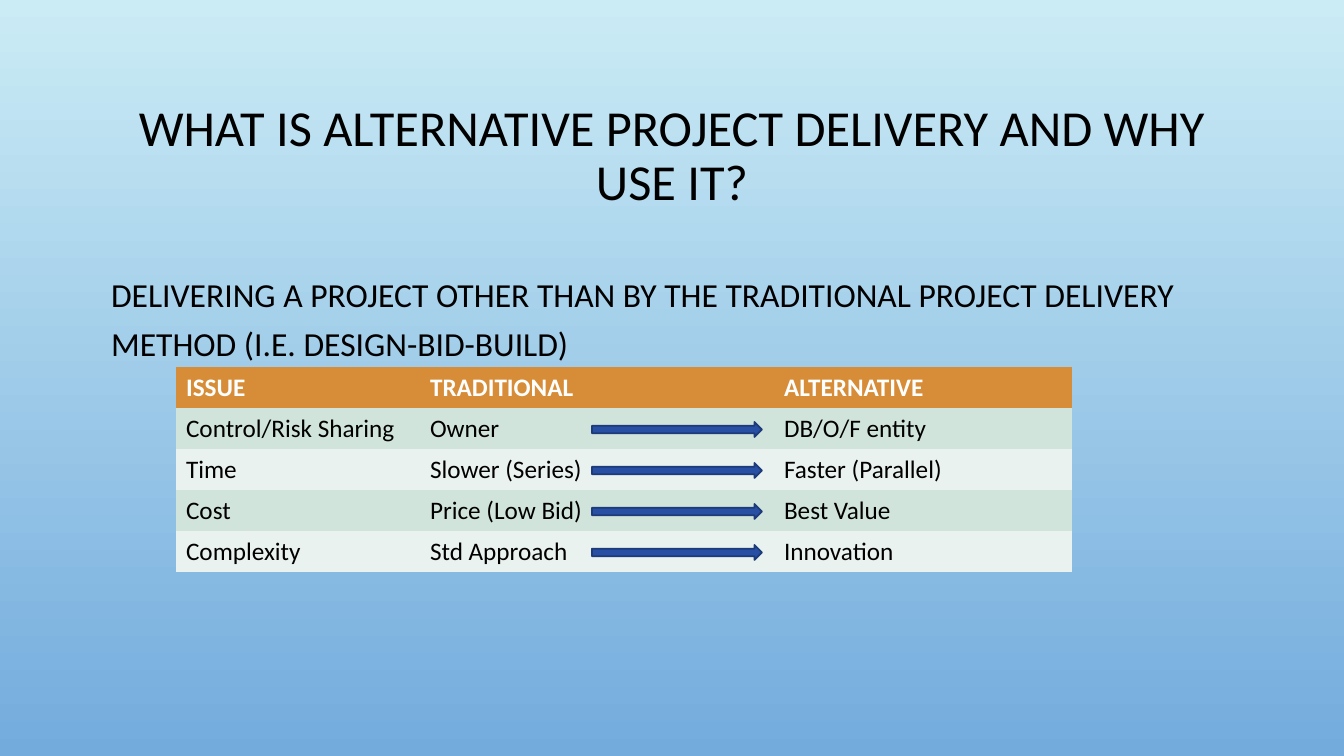
from dataclasses import dataclass

from lxml import etree
from pptx import Presentation
from pptx.dml.color import RGBColor
from pptx.enum.shapes import MSO_SHAPE
from pptx.enum.text import MSO_ANCHOR, MSO_AUTO_SIZE, PP_ALIGN
from pptx.oxml.ns import qn
from pptx.util import Emu, Pt

TITLE = "WHAT IS ALTERNATIVE PROJECT DELIVERY AND WHY USE IT?"
DEFINITION = (
    "DELIVERING A PROJECT OTHER THAN BY THE TRADITIONAL PROJECT DELIVERY "
    "METHOD (I.E. DESIGN-BID-BUILD)"
)
COMPARISON = [
    ("ISSUE", "TRADITIONAL", "ALTERNATIVE"),
    ("Control/Risk Sharing", "Owner", "DB/O/F entity"),
    ("Time", "Slower (Series)", "Faster (Parallel)"),
    ("Cost", "Price (Low Bid)", "Best Value"),
    ("Complexity", "Std Approach", "Innovation"),
]

SLIDE_SIZE = (1344, 756)
TITLE_BOX = (101, 69, 1142, 176)
BODY_BOX = (101, 261, 1142, 377)
TABLE_LEFT, TABLE_TOP = 176, 367
COLUMN_WIDTHS = (244, 354, 298)
ROW_HEIGHT = 41
ARROW_LEFT, ARROW_DROP = 592, 14
ARROW_SIZE = (170, 15)

ARROW = MSO_SHAPE.RIGHT_ARROW
MIDDLE, TOP = MSO_ANCHOR.MIDDLE, MSO_ANCHOR.TOP
CENTER, LEFT = PP_ALIGN.CENTER, PP_ALIGN.LEFT
NO_AUTOFIT = MSO_AUTO_SIZE.NONE
PLAIN_TABLE_STYLE = "{2D5ABB26-0587-4C30-8999-92F81FD0307C}"


@dataclass(frozen=True)
class Theme:
    font: str = "Calibri"
    title_size: int = 36
    body_size: int = 24
    table_size: int = 18
    sky: tuple = ("CBECF5", "73ABDD")
    text: str = "000000"
    header_text: str = "FFFFFF"
    header_fill: str = "D78D38"
    bands: tuple = ("D1E4DB", "E9F2EE")
    arrow_fill: str = "274FA4"
    arrow_line: str = "1D3A79"


THEME = Theme()


def px(length):
    return Emu(round(length * 914400 / 100.8))


def rgb(value):
    return RGBColor.from_string(value)


def style_font(paragraph, size, color, bold=False):
    font = paragraph.font
    font.name, font.size, font.bold = THEME.font, Pt(size), bold
    font.color.rgb = rgb(color)


def fill_placeholder(shape, box, text, size, anchor, alignment, line_spacing):
    shape.left, shape.top, shape.width, shape.height = map(px, box)
    frame = shape.text_frame
    frame.text = text
    frame.word_wrap = True
    frame.auto_size = NO_AUTOFIT
    frame.vertical_anchor = anchor
    paragraph = frame.paragraphs[0]
    paragraph.alignment = alignment
    paragraph.line_spacing = line_spacing
    paragraph.space_before = Pt(0)
    properties = paragraph._p.get_or_add_pPr()
    properties.set("marL", "0")
    properties.set("indent", "0")
    etree.SubElement(properties, qn("a:buNone"))
    style_font(paragraph, size, THEME.text)


def paint_background(slide):
    fill = slide.background.fill
    fill.gradient()
    fill.gradient_angle = 270
    for stop, color in zip(fill.gradient_stops, THEME.sky):
        stop.color.rgb = rgb(color)


def add_comparison(slide):
    table = slide.shapes.add_table(
        len(COMPARISON), len(COLUMN_WIDTHS), px(TABLE_LEFT), px(TABLE_TOP),
        px(sum(COLUMN_WIDTHS)), px(ROW_HEIGHT * len(COMPARISON)),
    ).table
    table._tbl.tblPr.find(qn("a:tableStyleId")).text = PLAIN_TABLE_STYLE
    for column, width in zip(table.columns, COLUMN_WIDTHS):
        column.width = px(width)
    for index, values in enumerate(COMPARISON):
        table.rows[index].height = px(ROW_HEIGHT)
        header = index == 0
        fill = THEME.header_fill if header else THEME.bands[(index - 1) % 2]
        color = THEME.header_text if header else THEME.text
        for cell, value in zip(table.rows[index].cells, values):
            cell.text = value
            cell.fill.solid()
            cell.fill.fore_color.rgb = rgb(fill)
            style_font(cell.text_frame.paragraphs[0], THEME.table_size, color, header)


def add_arrows(slide):
    for row in range(1, len(COMPARISON)):
        top = TABLE_TOP + row * ROW_HEIGHT + ARROW_DROP
        arrow = slide.shapes.add_shape(
            ARROW, px(ARROW_LEFT), px(top), *map(px, ARROW_SIZE)
        )
        arrow.shadow.inherit = False
        arrow.fill.solid()
        arrow.fill.fore_color.rgb = rgb(THEME.arrow_fill)
        arrow.line.color.rgb = rgb(THEME.arrow_line)
        arrow.line.width = Pt(1.25)


def main():
    presentation = Presentation()
    presentation.slide_width, presentation.slide_height = map(px, SLIDE_SIZE)
    slide = presentation.slides.add_slide(presentation.slide_layouts[1])
    paint_background(slide)
    title, body = slide.placeholders
    fill_placeholder(title, TITLE_BOX, TITLE, THEME.title_size, MIDDLE, CENTER, 0.9)
    fill_placeholder(body, BODY_BOX, DEFINITION, THEME.body_size, TOP, LEFT, 1.2)
    add_comparison(slide)
    add_arrows(slide)
    presentation.save("out.pptx")


if __name__ == "__main__":
    main()
